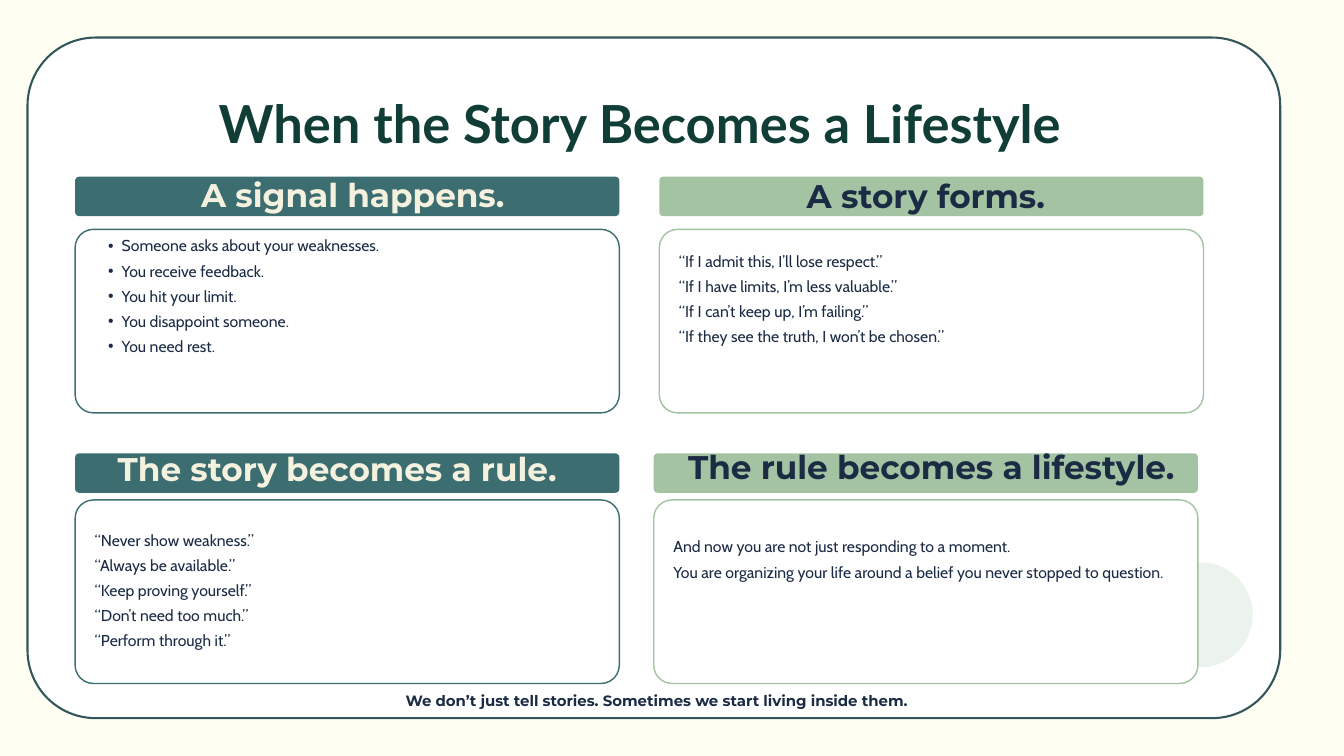
from dataclasses import dataclass

from lxml import etree
from pptx import Presentation
from pptx.dml.color import RGBColor
from pptx.enum.shapes import MSO_SHAPE
from pptx.enum.text import MSO_ANCHOR, MSO_AUTO_SIZE, PP_ALIGN
from pptx.oxml.ns import qn
from pptx.util import Cm, Pt

ROUNDED, OVAL = MSO_SHAPE.ROUNDED_RECTANGLE, MSO_SHAPE.OVAL
LEFT, CENTER = PP_ALIGN.LEFT, PP_ALIGN.CENTER
TOP, NO_AUTOFIT = MSO_ANCHOR.TOP, MSO_AUTO_SIZE.NONE


@dataclass(frozen=True)
class Theme:
    page: str = "FFFEF2"
    white: str = "FFFFFF"
    frame: str = "33565A"
    title: str = "103E37"
    teal: str = "3C6E71"
    sage: str = "A4C3A2"
    cream: str = "F4F1DE"
    navy: str = "1B2B44"
    title_size: float = 56.2
    heading_size: float = 35.1
    body_size: float = 16.9
    closing_size: float = 16


theme = Theme()


def add_block(kind, box, fill, line=None, width=1.5):
    block = slide.shapes.add_shape(kind, *map(Cm, box))
    block.shadow.inherit = False
    block.fill.solid()
    block.fill.fore_color.rgb = RGBColor.from_string(fill)
    if line:
        block.line.color.rgb = RGBColor.from_string(line)
        block.line.width = Pt(width)
    else:
        block.line.fill.background()
    if kind == ROUNDED:
        block.adjustments[0] = 0.1
    return block


def write(holder, lines, font, size, color, spacing, align=LEFT, bold=False, bullets=False):
    frame = holder.text_frame
    frame.margin_left = frame.margin_right = frame.margin_top = frame.margin_bottom = 0
    frame.word_wrap = True
    frame.auto_size = NO_AUTOFIT
    frame.vertical_anchor = TOP
    frame.text = "\n".join(lines)
    for paragraph in frame.paragraphs:
        paragraph.alignment = align
        paragraph.line_spacing = Pt(spacing)
        if bullets:
            properties = paragraph._p.get_or_add_pPr()
            properties.set("marL", str(Cm(1.02)))
            properties.set("indent", str(Cm(-0.51)))
            etree.SubElement(properties, qn("a:buFont")).set("typeface", "Arial")
            etree.SubElement(properties, qn("a:buChar")).set("char", "•")
        for run in paragraph.runs:
            run.font.name = font
            run.font.size = Pt(size)
            run.font.bold = bold
            run.font.color.rgb = RGBColor.from_string(color)


deck = Presentation()
deck.slide_width, deck.slide_height = Cm(50.8), Cm(28.58)
slide = deck.slides.add_slide(deck.slide_layouts[5])
slide.background.fill.solid()
slide.background.fill.fore_color.rgb = RGBColor.from_string(theme.page)

add_block(ROUNDED, (1.04, 1.42, 47.35, 25.73), theme.white, theme.frame, 2.25)
accent = add_block(OVAL, (43.38, 21.26, 3.97, 3.97), theme.sage)
accent_color = accent.fill._xPr.find(qn("a:solidFill"))[0]
etree.SubElement(accent_color, qn("a:alpha")).set("val", "20000")

title = slide.shapes.title
slide.shapes.element.append(title.element)
title.left, title.top, title.width, title.height = map(Cm, (4.34, 3.63, 39.67, 2.64))
write(title, ["When the Story Becomes a Lifestyle"], "Lato", theme.title_size,
      theme.title, 61.8, CENTER, True)

CARD_WIDTH, HEADER_HEIGHT, BODY_HEIGHT, PADDING = 20.57, 1.49, 6.94, 0.74
schemes = [(theme.teal, theme.cream), (theme.sage, theme.navy)]
rows = [(6.68, 8.67), (17.14, 18.9)]
stages = [
    ("A signal happens.", 2.84, (3.05, 6.86), 8.69,
     ["Someone asks about your weaknesses.", "You receive feedback.", "You hit your limit.",
      "You disappoint someone.", "You need rest."]),
    ("A story forms.", 24.92, (24.71, 6.91), 9.27,
     ["“If I admit this, I’ll lose respect.”", "“If I have limits, I’m less valuable.”",
      "“If I can’t keep up, I’m failing.”", "“If they see the truth, I won’t be chosen.”"]),
    ("The story becomes a rule.", 2.84, (2.46, 17.22), 19.81,
     ["“Never show weakness.”", "“Always be available.”", "“Keep proving yourself.”",
      "“Don’t need too much.”", "“Perform through it.”"]),
    ("The rule becomes a lifestyle.", 24.71, (24.92, 17.15), 20.07,
     ["And now you are not just responding to a moment.",
      "You are organizing your life around a belief you never stopped to question."]),
]
for index, (heading, left, heading_at, text_top, lines) in enumerate(stages):
    accent_fill, heading_color = schemes[index % 2]
    header_top, body_top = rows[index // 2]
    add_block(ROUNDED, (left, header_top, CARD_WIDTH, HEADER_HEIGHT), accent_fill)
    heading_box = slide.shapes.add_textbox(*map(Cm, (*heading_at, CARD_WIDTH, 1.3)))
    write(heading_box, [heading], "Montserrat", theme.heading_size, heading_color,
          35.1, CENTER, True)
    add_block(ROUNDED, (left, body_top, CARD_WIDTH, BODY_HEIGHT), theme.white, accent_fill)
    body_box = slide.shapes.add_textbox(
        Cm(left + PADDING), Cm(text_top), Cm(CARD_WIDTH - 2 * PADDING), Pt(27 * len(lines)))
    write(body_box, lines, "Cabin", theme.body_size, theme.navy, 27, bullets=index == 0)

closing = slide.shapes.add_textbox(Cm(13.84), Cm(26.24), Cm(21.97), Cm(0.56))
write(closing, ["We don’t just tell stories. Sometimes we start living inside them."],
      "Montserrat", theme.closing_size, theme.navy, 16, CENTER, True)

deck.save("out.pptx")
